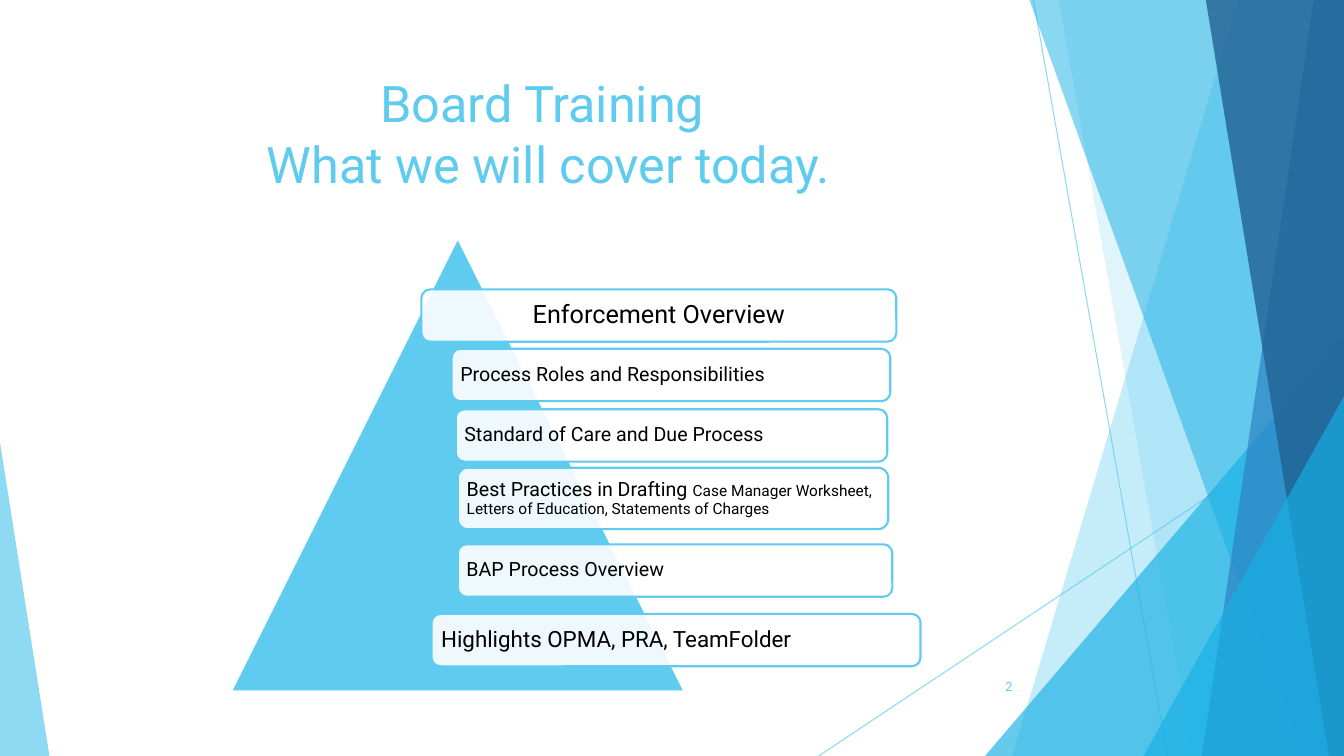
"""Builds the Board Training agenda slide with a pyramid list and faceted edges."""
from lxml.etree import SubElement
from pptx import Presentation
from pptx.dml.color import RGBColor
from pptx.enum.shapes import MSO_CONNECTOR, MSO_SHAPE as PRESET
from pptx.enum.text import MSO_ANCHOR as ANCHOR, PP_ALIGN as ALIGN
from pptx.oxml.ns import qn
from pptx.util import Inches, Pt

CELL = Inches(0.1)
COLUMNS, ROWS = 133.3, 75
FONT = "Roboto"
COLORS = {"sky": "5FCBEF", "cyan": "17B0E4", "blue": "2E83C3",
          "navy": "226292", "white": "FFFFFF", "black": "000000"}


def paint(fill, color, opacity=100):
    fill.solid()
    fill.fore_color.rgb = RGBColor.from_string(COLORS[color])
    if opacity < 100:
        color_element = fill._xPr.find(qn("a:solidFill"))[0]
        SubElement(color_element, qn("a:alpha")).set("val", str(opacity * 1000))


def write(shape, runs, color, align, anchor, inset=None, spacing=None):
    frame = shape.text_frame
    frame.word_wrap = True
    frame.vertical_anchor = anchor
    if inset is not None:
        frame.margin_left = frame.margin_right = Inches(inset)
        frame.margin_top = frame.margin_bottom = Inches(inset)
    paragraph = frame.paragraphs[0]
    paragraph.alignment = align
    paragraph.line_spacing = spacing
    for text, size in runs:
        if text == "\n":
            paragraph.add_line_break()
            continue
        run = paragraph.add_run()
        run.text = text
        run.font.name = FONT
        run.font.size = Pt(size)
        run.font.color.rgb = RGBColor.from_string(COLORS[color])


presentation = Presentation()
presentation.slide_width = int(COLUMNS * CELL)
presentation.slide_height = ROWS * CELL
slide = presentation.slides.add_slide(presentation.slide_layouts[6])
shapes = slide.shapes

for ends in [(102.5, 0, 115.8, ROWS), (COLUMNS, 40.3, 81.2, ROWS)]:
    line = shapes.add_connector(MSO_CONNECTOR.STRAIGHT, *[int(end * CELL) for end in ends])
    line.line.width = Pt(0.75)
    paint(line.line.fill, "sky", 70)
    SubElement(line._element.spPr, qn("a:effectLst"))

bands = [(122.8, 100.4, "sky", 36), (105, 118.3, "sky", 20), "lower wedge",
         (102.1, 129.1, "cyan", 50), (130.3, 119.2, "blue", 70),
         (119.6, 131.8, "navy", 80), "corner wedge", "left wedge"]
wedges = {"lower wedge": (97.7, 33.3, 35.6, 1, "cyan", 66),
          "corner wedge": (113.4, 39.3, 19.9, 1, "cyan", 66),
          "left wedge": (0, 43.9, 4.9, 0, "sky", 70)}
for band in bands:
    if band in wedges:
        left, top, width, apex, color, opacity = wedges[band]
        facet = shapes.add_shape(PRESET.ISOSCELES_TRIANGLE, int(left * CELL), int(top * CELL),
                                 int(width * CELL), int((ROWS - top) * CELL))
        facet.adjustments[0] = apex
    else:
        top_left, bottom_left, color, opacity = band
        builder = shapes.build_freeform(int(top_left * CELL), 0)
        builder.add_line_segments([(int(x * CELL), int(y * CELL)) for x, y in
                                   [(COLUMNS, 0), (COLUMNS, ROWS), (bottom_left, ROWS)]])
        facet = builder.convert_to_shape()
    facet.shadow.inherit = False
    paint(facet.fill, color, opacity)
    facet.line.fill.background()

title = shapes.add_textbox(*[int(length * CELL) for length in (7.4, 6.7, 94, 14.4)])
write(title, [("Board Training ", 36), ("\n", 36), ("What we will cover today.", 36)],
      "sky", ALIGN.CENTER, ANCHOR.TOP)

pyramid = shapes.add_shape(PRESET.ISOSCELES_TRIANGLE,
                           *[int(length * CELL) for length in (22.9, 23.6, 45, 45)])
pyramid.shadow.inherit = False
paint(pyramid.fill, "sky")
paint(pyramid.line.fill, "white")
pyramid.line.width = Pt(1.5)

topics = [
    (41.8, 28.7, 47.1, 5.2, ALIGN.CENTER, 0.07, [("Enforcement Overview", 18)]),
    (44.8, 34.6, 43.5, 5.2, ALIGN.LEFT, 0.06, [("Process Roles and Responsibilities", 14)]),
    (45.2, 40.6, 42.8, 5.2, ALIGN.LEFT, 0.06, [("Standard of Care and Due Process", 14)]),
    (45.4, 46.4, 42.7, 6.1, ALIGN.LEFT, 0.06, [
        ("Best Practices in Drafting ", 14),
        ("Case Manager Worksheet, Letters of Education, Statements of Charges", 11)]),
    (45.4, 54, 43.1, 5.2, ALIGN.LEFT, 0.06, [("BAP Process Overview", 14)]),
    (42.8, 60.9, 48.5, 5.2, ALIGN.LEFT, 0.07, [("Highlights OPMA, PRA, TeamFolder", 16)]),
]
for *place, align, inset, runs in topics:
    topic = shapes.add_shape(PRESET.ROUNDED_RECTANGLE, *[int(length * CELL) for length in place])
    topic.shadow.inherit = False
    paint(topic.fill, "white", 90)
    paint(topic.line.fill, "sky")
    topic.line.width = Pt(1.5)
    write(topic, runs, "black", align, ANCHOR.MIDDLE, inset, 0.9)

number = shapes.add_textbox(*[int(length * CELL) for length in (93.9, 66.1, 7.5, 4)])
write(number, [("2", 9)], "sky", ALIGN.RIGHT, ANCHOR.MIDDLE)

presentation.save("out.pptx")
